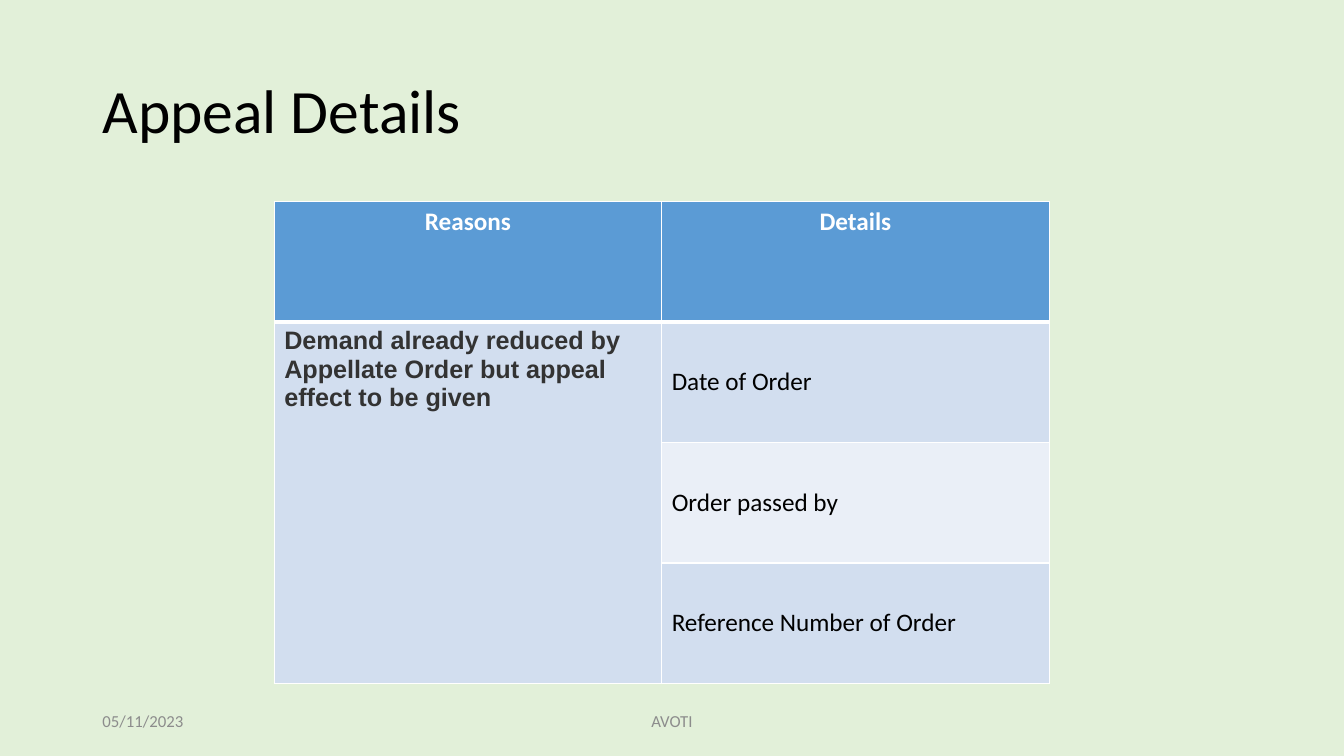
"""Build the "Appeal Details" slide with its table of reasons and details."""
from dataclasses import dataclass

import lxml.etree
import pptx
import pptx.dml.color
import pptx.enum.text
import pptx.oxml.ns
import pptx.presentation
import pptx.slide
import pptx.table
import pptx.text.text
import pptx.util

Cm = pptx.util.Cm
Pt = pptx.util.Pt
RGBColor = pptx.dml.color.RGBColor
Align = pptx.enum.text.PP_ALIGN
Anchor = pptx.enum.text.MSO_ANCHOR
qn = pptx.oxml.ns.qn

PALE_GREEN = RGBColor(0xE2, 0xF0, 0xD9)
HEADER_BLUE = RGBColor(0x5B, 0x9B, 0xD5)
BAND_DARK = RGBColor(0xD2, 0xDE, 0xEF)
BAND_LIGHT = RGBColor(0xEA, 0xEF, 0xF7)
WHITE = RGBColor(0xFF, 0xFF, 0xFF)
BLACK = RGBColor(0, 0, 0)
CHARCOAL = RGBColor(0x33, 0x33, 0x33)
GREY = RGBColor(0x8C, 0x8C, 0x8C)

MARGIN = Cm(2.33)


@dataclass(frozen=True)
class TextStyle:
    """Font, alignment and anchoring of a text."""

    size: int
    color: RGBColor
    font: str = "Calibri"
    bold: bool = False
    align: Align = Align.LEFT
    anchor: Anchor = Anchor.MIDDLE


@dataclass(frozen=True)
class Entry:
    """One table cell with its place, text and look."""

    row: int
    column: int
    text: str
    fill: RGBColor
    style: TextStyle


@dataclass(frozen=True)
class FooterItem:
    """One text in the footer line."""

    text: str
    left: Cm
    width: Cm
    align: Align


TITLE = TextStyle(44, BLACK)
HEADER = TextStyle(18, WHITE, bold=True, align=Align.CENTER, anchor=Anchor.TOP)
REASON = TextStyle(18, CHARCOAL, "Arial", bold=True, anchor=Anchor.TOP)
DETAIL = TextStyle(18, BLACK)

ENTRIES = [
    Entry(0, 0, "Reasons", HEADER_BLUE, HEADER),
    Entry(0, 1, "Details", HEADER_BLUE, HEADER),
    Entry(1, 0, "Demand already reduced by Appellate Order but appeal effect to be given",
          BAND_DARK, REASON),
    Entry(1, 1, "Date of Order", BAND_DARK, DETAIL),
    Entry(2, 1, "Order passed by", BAND_LIGHT, DETAIL),
    Entry(3, 1, "Reference Number of Order", BAND_DARK, DETAIL),
]

FOOTER = [
    FooterItem("05/11/2023", MARGIN, Cm(7.62), Align.LEFT),
    FooterItem("AVOTI", Cm(11.22), Cm(11.43), Align.CENTER),
]


def format_text(frame: pptx.text.text.TextFrame, style: TextStyle) -> None:
    """Apply a style to every paragraph of a text frame."""
    for paragraph in frame.paragraphs:
        paragraph.alignment = style.align
        for run in paragraph.runs:
            run.font.name = style.font
            run.font.size = Pt(style.size)
            run.font.bold = style.bold
            run.font.color.rgb = style.color


def add_borders(cell: pptx.table._Cell, row: int) -> None:
    """Give a cell white borders, thick between header and body."""
    properties = cell._tc.get_or_add_tcPr()
    widths = {"lnL": 1, "lnR": 1, "lnT": 3 if row == 1 else 1, "lnB": 3 if row == 0 else 1}
    for side, width in widths.items():
        line = lxml.etree.SubElement(properties, qn(f"a:{side}"), w=str(Pt(width)))
        fill = lxml.etree.SubElement(line, qn("a:solidFill"))
        lxml.etree.SubElement(fill, qn("a:srgbClr"), val=str(WHITE))


def add_title(slide: pptx.slide.Slide) -> None:
    """Place and format the title."""
    title = slide.shapes.title
    title.left, title.top, title.width, title.height = MARGIN, Cm(1.01), Cm(29.21), Cm(3.68)
    title.text_frame.text = "Appeal Details"
    title.text_frame.vertical_anchor = TITLE.anchor
    title.text_frame.paragraphs[0].line_spacing = 0.9
    format_text(title.text_frame, TITLE)


def add_appeal_table(slide: pptx.slide.Slide) -> None:
    """Draw the table, with the reason spanning all details."""
    appeal = slide.shapes.add_table(4, 2, Cm(6.91), Cm(5.08), Cm(19.53), Cm(12.14)).table
    for row in range(4):
        for column in range(2):
            add_borders(appeal.cell(row, column), row)
    appeal.cell(1, 0).merge(appeal.cell(3, 0))
    for entry in ENTRIES:
        cell = appeal.cell(entry.row, entry.column)
        cell.fill.solid()
        cell.fill.fore_color.rgb = entry.fill
        cell.vertical_anchor = entry.style.anchor
        cell.text_frame.text = entry.text
        format_text(cell.text_frame, entry.style)


def add_footer(slide: pptx.slide.Slide) -> None:
    """Write the footer line."""
    for item in FOOTER:
        frame = slide.shapes.add_textbox(item.left, Cm(17.65), item.width, Cm(1.01)).text_frame
        frame.word_wrap = True
        frame.vertical_anchor = Anchor.MIDDLE
        frame.text = item.text
        format_text(frame, TextStyle(12, GREY, align=item.align))


def main() -> None:
    """Build and save the presentation."""
    deck = pptx.Presentation()
    deck.slide_width, deck.slide_height = Cm(33.87), Cm(19.05)
    slide = deck.slides.add_slide(deck.slide_layouts[5])
    slide.background.fill.solid()
    slide.background.fill.fore_color.rgb = PALE_GREEN
    add_title(slide)
    add_appeal_table(slide)
    add_footer(slide)
    deck.save("out.pptx")


if __name__ == "__main__":
    main()
